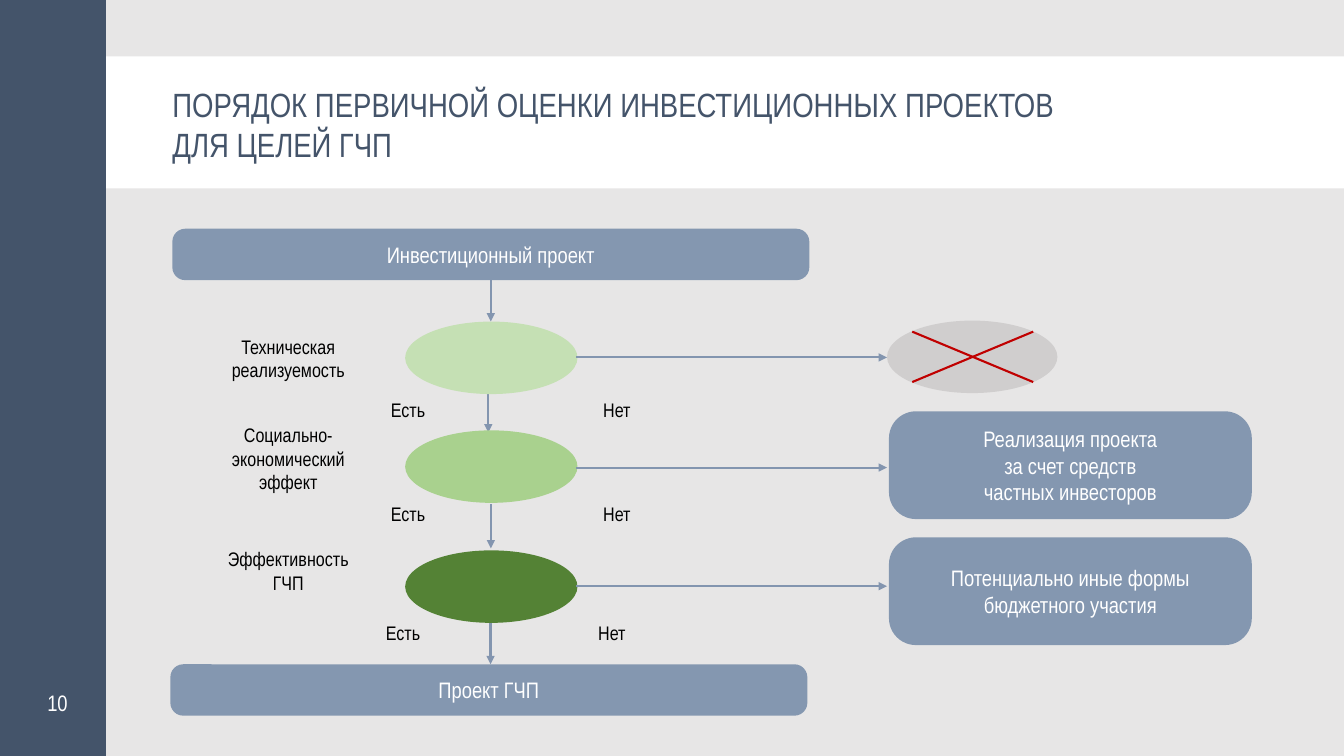
from lxml.etree import SubElement
from pptx import Presentation
from pptx.dml.color import RGBColor
from pptx.enum.shapes import MSO_CONNECTOR, MSO_SHAPE as SHAPE
from pptx.enum.text import MSO_ANCHOR as ANCHOR, MSO_AUTO_SIZE, PP_ALIGN as ALIGN
from pptx.oxml.ns import qn
from pptx.util import Pt

FONT = "Arial Narrow"
COLORS = {
    "background": "E7E6E6", "white": "FFFFFF", "black": "000000",
    "navy": "44546A", "box": "8497B0", "arrow": "8395AF",
    "feasible": "C5E0B4", "social": "A9D18E", "effective": "548235",
    "rejected": "D0CECE", "cross": "C00000",
}
MARGINS = ("margin_left", "margin_top", "margin_right", "margin_bottom")

# Colour, ellipse top, label, label top and height, answer top and shift,
# side arrow height, down arrow x, start and end
STEPS = [
    ("feasible", 229.7, ["Техническая реализуемость"], 235.4, 41,
     280.8, 0, 255.3, 348.8, 277.2, 308.9),
    ("social", 307.4, ["Социально-экономический", "эффект"], 298.8, 58.3,
     355, 0, 334, 350.6, 360, 391.7),
    ("effective", 393.1, ["Эффективность", "ГЧП"], 387.4, 41,
     440, -3.6, 418.7, 350.4, 442.8, 474.5),
]
BARS = [(123.1, 163.4, "Инвестиционный проект"), (121.7, 474.5, "Проект ГЧП")]
OUTCOMES = [
    (293.8, ["Реализация проекта", "за счет средств", "частных инвесторов"]),
    (383.8, ["Потенциально иные формы бюджетного участия"]),
]
ANSWERS = [(264.2, "Есть"), (413.3, "Нет")]


def rgb(name):
    return RGBColor.from_string(COLORS[name])


def apply(target, values):
    for name, value in values.items():
        setattr(target, name, value)


def write(shape, lines, size, color, align=ALIGN.CENTER, anchor=ANCHOR.MIDDLE, inset=None):
    frame = shape.text_frame
    frame.text = "\n".join(lines)
    apply(frame, {"word_wrap": True, "auto_size": MSO_AUTO_SIZE.NONE,
                  "vertical_anchor": anchor})
    if inset is not None:
        apply(frame, dict.fromkeys(MARGINS, Pt(inset)))
    for paragraph in frame.paragraphs:
        paragraph.alignment = align
        apply(paragraph.font, {"name": FONT, "size": Pt(size)})
        paragraph.font.color.rgb = rgb(color)


def add_filled(slide, kind, box, color, lines=None):
    shape = slide.shapes.add_shape(kind, *map(Pt, box))
    shape.shadow.inherit = False
    shape.fill.solid()
    shape.fill.fore_color.rgb = rgb(color)
    shape.line.fill.background()
    if kind == SHAPE.ROUNDED_RECTANGLE:
        shape.adjustments[0] = 0.25
    if lines:
        write(shape, lines, 16, "white")
    return shape


def add_label(slide, box, lines, size=14, color="black", **layout):
    write(slide.shapes.add_textbox(*map(Pt, box)), lines, size, color, **layout)


def add_line(slide, points, color="arrow", arrow=True):
    line = slide.shapes.add_connector(MSO_CONNECTOR.STRAIGHT, *map(Pt, points))
    line.line.color.rgb = rgb(color)
    line.line.width = Pt(1.5)
    if arrow:
        SubElement(line.line._get_or_add_ln(), qn("a:tailEnd"), type="triangle")
    SubElement(line.element.spPr, qn("a:effectLst"))


def add_frame(slide):
    """Set the background, title band, title, side bar and page number."""
    slide.background.fill.solid()
    slide.background.fill.fore_color.rgb = rgb("background")
    title = slide.shapes.title
    apply(title, dict(left=Pt(123.1), top=Pt(56.9), width=Pt(649.4), height=Pt(63.4)))
    write(title, ["ПОРЯДОК ПЕРВИЧНОЙ ОЦЕНКИ ИНВЕСТИЦИОННЫХ ПРОЕКТОВ ДЛЯ ЦЕЛЕЙ ГЧП"],
          24, "navy", align=ALIGN.LEFT, inset=0)
    band = add_filled(slide, SHAPE.RECTANGLE, (0, 40.3, 960, 94.3), "white")
    title.element.addprevious(band.element)
    add_filled(slide, SHAPE.RECTANGLE, (0, 0, 75.6, 540), "navy")
    add_label(slide, (33.8, 482.4, 216, 28.8), ["10"], 16, "white",
              align=ALIGN.LEFT, anchor=ANCHOR.BOTTOM, inset=0)


def add_step(slide, color, top, label, label_top, label_height,
             answer_top, shift, side_y, down_x, down_start, down_end):
    add_line(slide, (down_x, down_start, down_x, down_end))
    add_filled(slide, SHAPE.OVAL, (289.4, top, 123.1, 51.8), color)
    add_label(slide, (135.4, label_top, 141.1, label_height), label, anchor=ANCHOR.TOP)
    for left, answer in ANSWERS:
        add_label(slide, (left + shift, answer_top, 54.7, 24.5), [answer], anchor=ANCHOR.TOP)
    add_line(slide, (411.8, side_y, 633.6, side_y))


def add_rejection(slide):
    add_filled(slide, SHAPE.OVAL, (633.6, 229, 121.7, 51.8), "rejected")
    for start, end in ((236.9, 272.9), (272.9, 236.9)):
        add_line(slide, (651.6, start, 738, end), "cross", arrow=False)


def main():
    presentation = Presentation()
    apply(presentation, {"slide_width": Pt(960), "slide_height": Pt(540)})
    slide = presentation.slides.add_slide(presentation.slide_layouts[5])
    add_frame(slide)
    for left, top, text in BARS:
        add_filled(slide, SHAPE.ROUNDED_RECTANGLE, (left, top, 455, 36.7), "box", [text])
    add_line(slide, (350.6, 200.2, 350.6, 229.7))
    for step in STEPS:
        add_step(slide, *step)
    add_rejection(slide)
    for top, lines in OUTCOMES:
        add_filled(slide, SHAPE.ROUNDED_RECTANGLE, (635, top, 259.2, 77), "box", lines)
    presentation.save("out.pptx")


if __name__ == "__main__":
    main()
